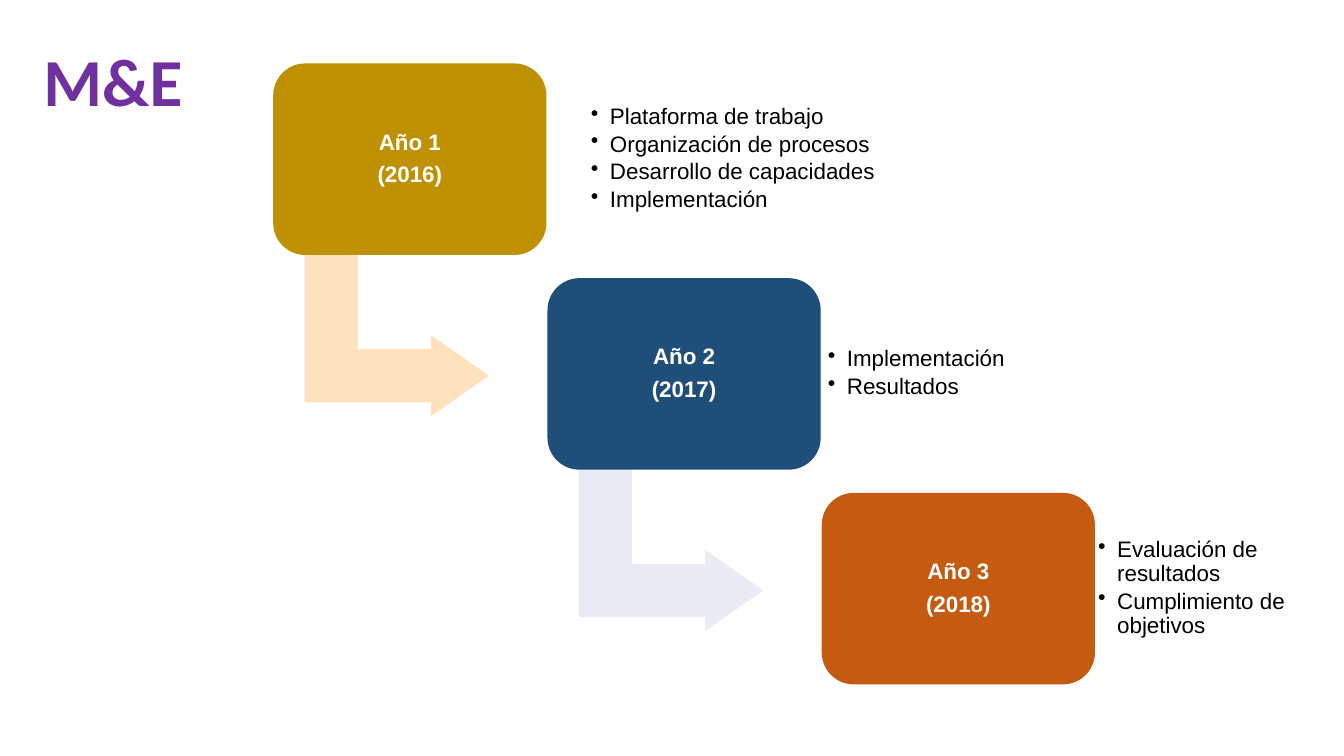
import pptx
import pptx.util
import pptx.dml.color
import pptx.enum.shapes
import pptx.enum.text
import pptx.oxml.ns
import lxml.etree

Inches = pptx.util.Inches
Pt = pptx.util.Pt
SHAPES = pptx.enum.shapes.MSO_SHAPE
ALIGN = pptx.enum.text.PP_ALIGN
ANCHOR = pptx.enum.text.MSO_ANCHOR

COLORS = {
    "title": "7030A0",
    "year_text": "FFFFFF",
    "bullet_text": "000000",
    "gold": "BF9000",
    "blue": "1F4E79",
    "orange": "C55A11",
    "peach": "FFE2BD",
    "lavender": "E9ECF5",
}

YEARS = [
    ("Año 1", "(2016)", "gold", "peach", 5.79, 3.94,
     ["Plataforma de trabajo", "Organización de procesos",
      "Desarrollo de capacidades", "Implementación"]),
    ("Año 2", "(2017)", "blue", "lavender", 8.14, 1.97,
     ["Implementación", "Resultados"]),
    ("Año 3", "(2018)", "orange", None, 10.82, 2.05,
     ["Evaluación de resultados", "Cumplimiento de objetivos"]),
]


def add_step_shape(kind, left, top, width, height, color, adjustments):
    shape = slide.shapes.add_shape(
        kind, Inches(left), Inches(top), Inches(width), Inches(height))
    shape.shadow.inherit = False
    shape.fill.solid()
    shape.fill.fore_color.rgb = pptx.dml.color.RGBColor.from_string(COLORS[color])
    shape.line.fill.background()
    for index, value in enumerate(adjustments):
        shape.adjustments[index] = value
    return shape


def write_lines(shape, lines, size, font, color, bold, align, anchor, space_after):
    frame = shape.text_frame
    frame.word_wrap = True
    frame.auto_size = pptx.enum.text.MSO_AUTO_SIZE.NONE
    frame.vertical_anchor = anchor
    frame.margin_left = frame.margin_right = Inches(0.07)
    frame.margin_top = frame.margin_bottom = Inches(0.07)
    frame.text = "\n".join(lines)
    for paragraph in frame.paragraphs:
        paragraph.alignment = align
        paragraph.line_spacing = 0.9
        paragraph.space_before = Pt(0)
        paragraph.space_after = Pt(space_after)
        paragraph.font.size = Pt(size)
        paragraph.font.name = font
        paragraph.font.bold = bold
        paragraph.font.color.rgb = pptx.dml.color.RGBColor.from_string(COLORS[color])
    return frame.paragraphs


presentation = pptx.Presentation()
presentation.slide_width = Inches(13.33)
presentation.slide_height = Inches(7.5)
slide = presentation.slides.add_slide(presentation.slide_layouts[5])

title = slide.shapes.title
title.left, title.top = Inches(0.23), Inches(0)
title.width, title.height = Inches(1.78), Inches(1.27)
write_lines(title, ["M&E"], 48, "Calibri", "title", True,
            ALIGN.CENTER, ANCHOR.BOTTOM, 0)

for step, (year, date, color, arrow_color, list_left, list_width, items) in enumerate(YEARS):
    left = 2.71 + 2.72 * step
    top = 0.63 + 2.13 * step

    if arrow_color:
        arrow = add_step_shape(SHAPES.BENT_UP_ARROW, left + 0.42, top + 1.78,
                               1.61, 1.83, arrow_color, [0.328, 0.25, 0.358])
        arrow.rotation = 90

    box = add_step_shape(SHAPES.ROUNDED_RECTANGLE, left, top, 2.71, 1.9, color, [0.167])
    write_lines(box, [year, date], 16, "Arial", "year_text", True,
                ALIGN.CENTER, ANCHOR.MIDDLE, 6)

    bullet_box = slide.shapes.add_textbox(
        Inches(list_left), Inches(top + 0.18), Inches(list_width), Inches(1.53))
    for paragraph in write_lines(bullet_box, items, 16, "Arial", "bullet_text", False,
                                 ALIGN.LEFT, ANCHOR.MIDDLE, 2.5):
        paragraph.level = 1
        properties = paragraph._p.get_or_add_pPr()
        properties.set("marL", str(Inches(0.19)))
        properties.set("indent", str(Inches(-0.19)))
        bullet = lxml.etree.SubElement(properties, pptx.oxml.ns.qn("a:buChar"))
        bullet.set("char", "•")
        properties.insert_element_before(bullet, "a:tabLst", "a:defRPr", "a:extLst")

presentation.save("out.pptx")
